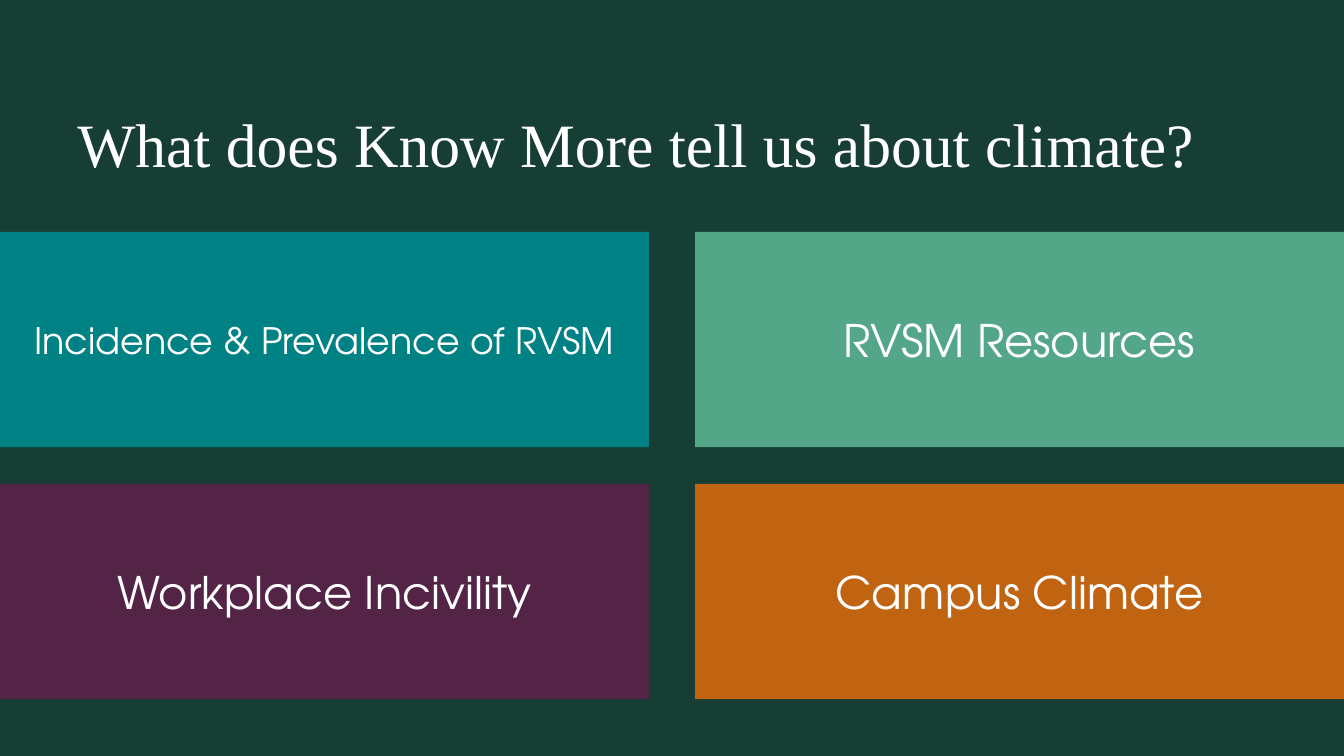
import pptx
import pptx.dml.color
import pptx.enum.shapes
import pptx.enum.text
import pptx.oxml.ns
import pptx.util
import lxml.etree

EMU_PER_PX = 9525
SLIDE_WIDTH, SLIDE_HEIGHT = 1280, 720
TILE_WIDTH, TILE_HEIGHT = 618, 205
FIRST_ROW_TOP, ROW_STEP = 221, 240

COLORS = {
    "background": "163E35",
    "text": "FFFFFF",
    "teal": "008183",
    "green": "54A689",
    "plum": "6B1B4E",
    "orange": "E46C0A",
}

TILES = [
    ("Incidence & Prevalence of RVSM", "teal", 100, 26),
    ("RVSM Resources", "green", 100, 32),
    ("Workplace Incivility", "plum", 73, 32),
    ("Campus Climate", "orange", 83, 32),
]


def px(length):
    return pptx.util.Emu(length * EMU_PER_PX)


def color(name):
    return pptx.dml.color.RGBColor.from_string(COLORS[name])


def format_text(paragraph, font_name, size, alignment):
    paragraph.alignment = alignment
    paragraph.font.name = font_name
    paragraph.font.size = pptx.util.Pt(size)
    paragraph.font.color.rgb = color("text")


def set_opacity(shape, percent):
    fill_color = shape._element.spPr.find(
        f"{pptx.oxml.ns.qn('a:solidFill')}/{pptx.oxml.ns.qn('a:srgbClr')}")
    alpha = lxml.etree.SubElement(fill_color, pptx.oxml.ns.qn("a:alpha"))
    alpha.set("val", str(percent * 1000))


def add_title(slide, text):
    title = slide.shapes.title
    title.left, title.top = px(64), px(56)
    title.width, title.height = px(1152), px(120)
    frame = title.text_frame
    frame.text = text
    frame.auto_size = pptx.enum.text.MSO_AUTO_SIZE.NONE
    frame.vertical_anchor = pptx.enum.text.MSO_ANCHOR.BOTTOM
    format_text(frame.paragraphs[0], "Times New Roman", 44,
                pptx.enum.text.PP_ALIGN.LEFT)


def add_tile(slide, left, top, text, fill, opacity, size):
    shape = slide.shapes.add_shape(
        pptx.enum.shapes.MSO_SHAPE.RECTANGLE,
        px(left), px(top), px(TILE_WIDTH), px(TILE_HEIGHT))
    shape.shadow.inherit = False
    shape.line.fill.background()
    shape.fill.solid()
    shape.fill.fore_color.rgb = color(fill)
    if opacity < 100:
        set_opacity(shape, opacity)
    frame = shape.text_frame
    frame.text = text
    frame.word_wrap = True
    frame.vertical_anchor = pptx.enum.text.MSO_ANCHOR.MIDDLE
    format_text(frame.paragraphs[0], "TeX Gyre Adventor", size,
                pptx.enum.text.PP_ALIGN.CENTER)


def main():
    presentation = pptx.Presentation()
    presentation.slide_width = px(SLIDE_WIDTH)
    presentation.slide_height = px(SLIDE_HEIGHT)
    slide = presentation.slides.add_slide(presentation.slide_layouts[5])
    slide.background.fill.solid()
    slide.background.fill.fore_color.rgb = color("background")

    add_title(slide, "What does Know More tell us about climate?")
    for index, tile in enumerate(TILES):
        row, column = divmod(index, 2)
        left = column * (SLIDE_WIDTH - TILE_WIDTH)
        add_tile(slide, left, FIRST_ROW_TOP + row * ROW_STEP, *tile)

    presentation.save("out.pptx")


if __name__ == "__main__":
    main()
